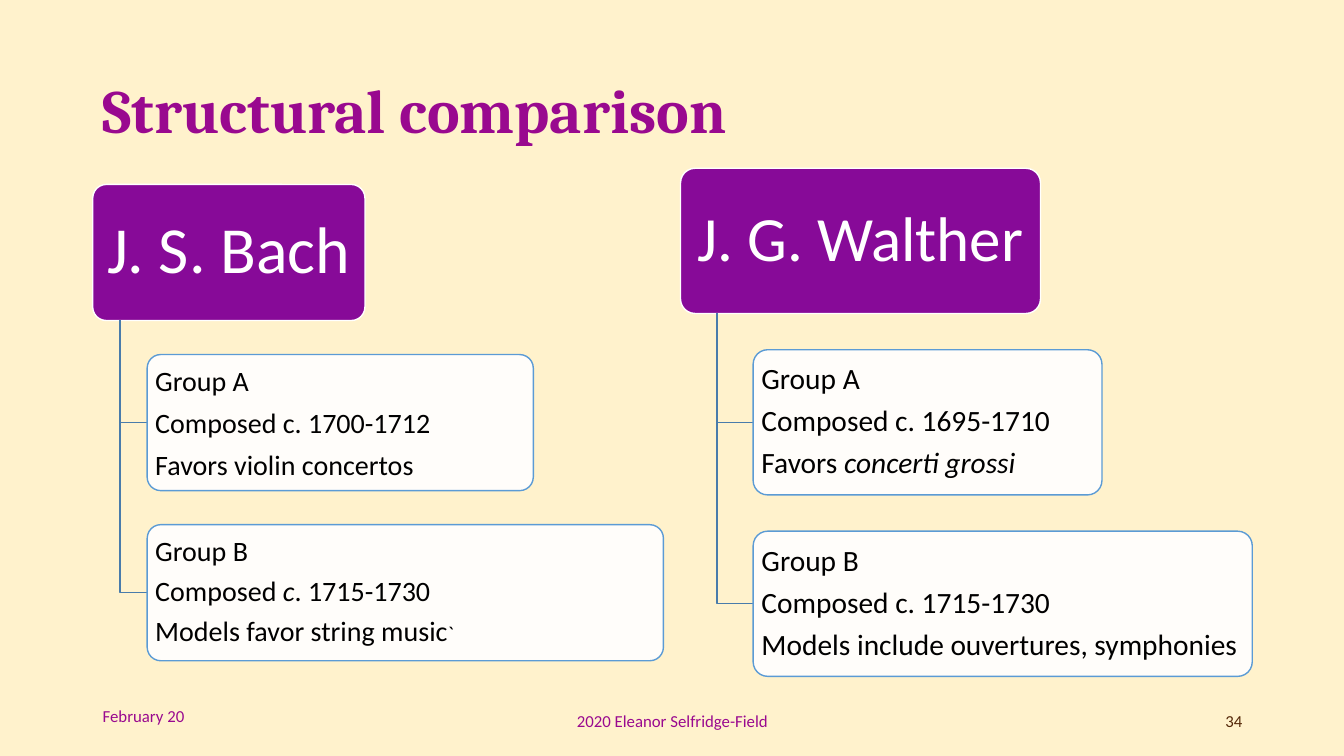
from lxml import etree
from pptx import Presentation
from pptx import util as u
from pptx.dml.color import RGBColor
from pptx.enum import shapes, text
from pptx.oxml.ns import qn

PURPLE, MAGENTA, BLACK, WHITE = "870A98", "99098F", "000000", "FFFFFF"
ELBOW, BORDER = "497CAB", "5B9BD5"


def rgb(value):
    return RGBColor.from_string(value)


def format_run(r, size, color, font="Calibri", bold=False, italic=False):
    r.font.size = u.Pt(size)
    r.font.color.rgb = rgb(color)
    r.font.name = font
    r.font.bold = bold
    r.font.italic = italic


def set_margins(tf, side, top):
    tf.margin_left = tf.margin_right = u.Inches(side)
    tf.margin_top = tf.margin_bottom = u.Inches(top)
    tf.vertical_anchor = text.MSO_ANCHOR.MIDDLE


def add_title(slide, title):
    sp = slide.shapes.title
    sp.left, sp.top = u.Inches(0.92), u.Inches(0.4)
    sp.width, sp.height = u.Inches(11.5), u.Inches(1.45)
    tf = sp.text_frame
    tf.text = title
    set_margins(tf, 0.1, 0.05)
    p = tf.paragraphs[0]
    p.alignment = text.PP_ALIGN.LEFT
    p.line_spacing = 0.9
    format_run(p.runs[0], 44, MAGENTA, "Cambria", bold=True)


def add_box(slide, left, top, width, height, fill, line, alpha=100):
    sp = slide.shapes.add_shape(
        shapes.MSO_SHAPE.ROUNDED_RECTANGLE,
        u.Inches(left), u.Inches(top), u.Inches(width), u.Inches(height))
    sp.adjustments[0] = 0.1
    sp.shadow.inherit = False
    sp.fill.solid()
    sp.fill.fore_color.rgb = rgb(fill)
    sp.line.color.rgb = rgb(line)
    sp.line.width = u.Pt(1)
    if alpha < 100:
        color = sp.fill._xPr.find(qn("a:solidFill"))[0]
        etree.SubElement(color, qn("a:alpha")).set("val", str(alpha * 1000))
    return sp


def add_composer(slide, name, left, top, width, height, size):
    sp = add_box(slide, left, top, width, height, PURPLE, WHITE)
    tf = sp.text_frame
    tf.text = name
    tf.word_wrap = False
    set_margins(tf, 0.1, 0.07)
    p = tf.paragraphs[0]
    p.alignment = text.PP_ALIGN.CENTER
    p.line_spacing = 0.9
    p.space_after = u.Pt(0.35 * size)
    format_run(p.runs[0], size, WHITE)


def add_group(slide, lines, left, top, width, height, size, spacing, after):
    """Add a white box; text between asterisks is italic."""
    sp = add_box(slide, left, top, width, height, WHITE, BORDER, alpha=90)
    tf = sp.text_frame
    tf.word_wrap = True
    set_margins(tf, 0.04, 0.03)
    for i, line in enumerate(lines):
        p = tf.add_paragraph() if i else tf.paragraphs[0]
        p.alignment = text.PP_ALIGN.LEFT
        p.line_spacing = spacing
        p.space_after = u.Pt(after)
        for j, part in enumerate(line.split("*")):
            if part:
                r = p.add_run()
                r.text = part
                format_run(r, size, BLACK, italic=j % 2 == 1)
    return sp


def add_elbow(slide, x, y, end_x, end_y):
    builder = slide.shapes.build_freeform(u.Inches(x), u.Inches(y))
    builder.add_line_segments(
        [(u.Inches(x), u.Inches(end_y)), (u.Inches(end_x), u.Inches(end_y))],
        close=False)
    sp = builder.convert_to_shape()
    sp.shadow.inherit = False
    sp.fill.background()
    sp.line.color.rgb = rgb(ELBOW)
    sp.line.width = u.Pt(1)


def add_tree(slide, name, left, top, width, height, name_size, size, groups):
    """Add a composer box with groups hung below it at equal steps."""
    add_composer(slide, name, left, top, width, height, name_size)
    boxes = []
    for i, (group_width, spacing, after, lines) in enumerate(groups, 1):
        group_left, group_top = left + 0.2 * height * 2 * width / width, top + 1.25 * height * i
        if name.endswith("Walther"):
            group_left = left + 0.72
        else:
            group_left = left + 0.54
        trunk = (left + group_left) / 2
        add_elbow(slide, trunk, top + height, group_left, group_top + height / 2)
        boxes.append(add_group(slide, lines, group_left, group_top, group_width,
                               height, size, spacing, after))
    return boxes


def add_footer(slide, content, left, top, width, align, color):
    sp = slide.shapes.add_textbox(
        u.Inches(left), u.Inches(top), u.Inches(width), u.Inches(0.4))
    tf = sp.text_frame
    tf.text = content
    tf.word_wrap = True
    set_margins(tf, 0.1, 0.05)
    p = tf.paragraphs[0]
    p.alignment = align
    format_run(p.runs[0], 12, color)


def main():
    prs = Presentation()
    prs.slide_width, prs.slide_height = u.Inches(13.33), u.Inches(7.5)
    slide = prs.slides.add_slide(prs.slide_layouts[5])
    slide.background.fill.solid()
    slide.background.fill.fore_color.rgb = rgb("FFF2CC")
    add_title(slide, "Structural comparison")

    bach_boxes = add_tree(slide, "J. S. Bach", 0.92, 1.83, 2.7, 1.35, 47, 20, [
        (3.83, 1.0, 6, ["Group A", "Composed c. 1700-1712",
                        "Favors violin concertos"]),
        (5.12, 0.9, 7, ["Group B", "Composed *c*. 1715-1730",
                        "Models favor string music"]),
    ])
    r = bach_boxes[-1].text_frame.paragraphs[-1].add_run()
    r.text = "`"
    format_run(r, 15, BLACK)

    add_tree(slide, "J. G. Walther", 6.75, 1.67, 3.57, 1.44, 45, 21, [
        (3.46, 0.9, 7.35, ["Group A", "Composed c. 1695-1710",
                           "Favors *concerti grossi*"]),
        (4.95, 0.9, 7.35, ["Group B", "Composed c. 1715-1730",
                           "Models include ouvertures, symphonies"]),
    ])

    align = text.PP_ALIGN
    add_footer(slide, "February 20", 0.92, 6.9, 3, align.LEFT, MAGENTA)
    add_footer(slide, "2020 Eleanor Selfridge-Field", 4.42, 6.95, 4.5,
               align.CENTER, MAGENTA)
    add_footer(slide, "34", 9.42, 6.95, 3, align.RIGHT, "542708")
    prs.save("out.pptx")


if __name__ == "__main__":
    main()
